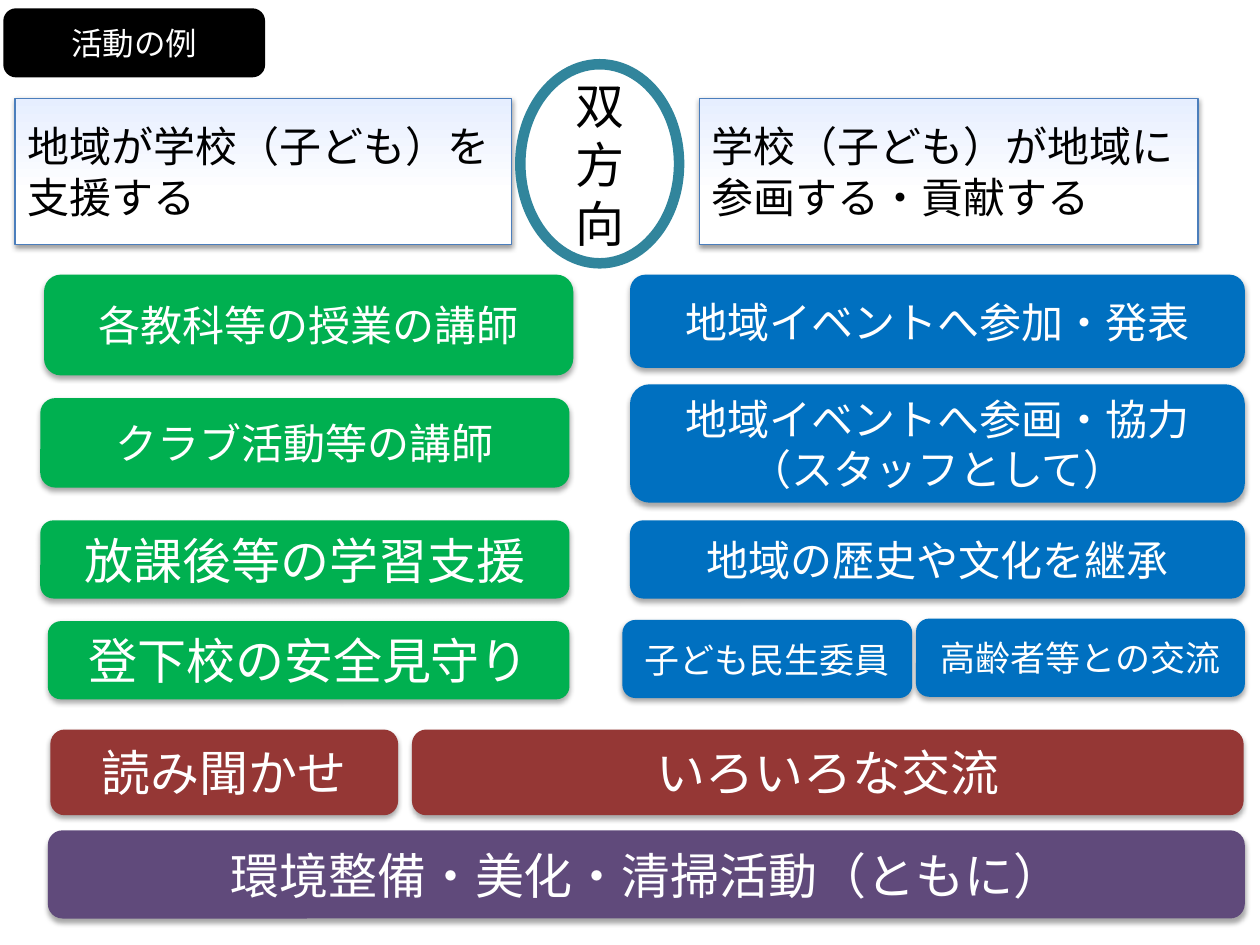
from lxml.etree import SubElement
from pptx import Presentation
from pptx.dml.color import RGBColor
from pptx.enum.shapes import MSO_SHAPE
from pptx.enum.text import MSO_ANCHOR, PP_ALIGN
from pptx.oxml.ns import qn
from pptx.util import Inches, Pt

BLACK = RGBColor(0x00, 0x00, 0x00)
WHITE = RGBColor(0xFF, 0xFF, 0xFF)
PALE = RGBColor(0xE6, 0xEE, 0xFF)
EDGE = RGBColor(0x4B, 0x7E, 0xBC)
TEAL = RGBColor(0x31, 0x85, 0x9C)
GREEN = RGBColor(0x00, 0xB0, 0x50)
BLUE = RGBColor(0x00, 0x70, 0xC0)
RED = RGBColor(0x95, 0x37, 0x35)
PURPLE = RGBColor(0x60, 0x4A, 0x7B)

LATIN = "Calibri"
ASIAN = "Noto Sans CJK JP"


def write(shape, text, size=24, color=WHITE, font=LATIN, align=PP_ALIGN.CENTER):
    frame = shape.text_frame
    frame.word_wrap = True
    frame.vertical_anchor = MSO_ANCHOR.MIDDLE
    frame.text = text
    for para in frame.paragraphs:
        para.alignment = align
        for run in para.runs:
            run.font.size = Pt(size)
            run.font.name = font
            run.font.color.rgb = color
            if font == ASIAN:
                east = SubElement(run.font._element, qn("a:ea"))
                east.set("typeface", font)


class Board:
    def __init__(self, slide):
        self.slide = slide

    def shape(self, kind, place, fill=None, line=None, width=1):
        item = self.slide.shapes.add_shape(kind, *map(Inches, place))
        item.shadow.inherit = False
        if fill is not None:
            item.fill.solid()
            item.fill.fore_color.rgb = fill
        if line is None:
            item.line.fill.background()
        else:
            item.line.color.rgb = line
            item.line.width = Pt(width)
        return item

    def shade(self, item, drop, alpha):
        effects = item._element.spPr.find(qn("a:effectLst"))
        outer = SubElement(effects, qn("a:outerShdw"), blurRad=str(Pt(3.1)),
                           dist=str(Pt(drop)), dir="5400000", rotWithShape="0")
        color = SubElement(outer, qn("a:srgbClr"), val=str(BLACK))
        SubElement(color, qn("a:alpha"), val=str(alpha * 1000))

    def label(self, text, place):
        item = self.shape(MSO_SHAPE.ROUNDED_RECTANGLE, place, BLACK, BLACK, 2)
        write(item, text, size=18)

    def head(self, text, place):
        item = self.shape(MSO_SHAPE.RECTANGLE, place, line=EDGE, width=0.75)
        item.fill.gradient()
        item.fill.gradient_angle = 270
        for stop, color, point in zip(item.fill.gradient_stops, (PALE, WHITE), (0, 0.65)):
            stop.color.rgb = color
            stop.position = point
        self.shade(item, 1.6, 38)
        write(item, text, color=BLACK, font=ASIAN, align=PP_ALIGN.LEFT)

    def ring(self, text, place):
        item = self.shape(MSO_SHAPE.OVAL, place, WHITE, TEAL, 6)
        write(item, text, size=28, color=BLACK, font=ASIAN)

    def card(self, text, place, fill, size):
        item = self.shape(MSO_SHAPE.ROUNDED_RECTANGLE, place, fill)
        self.shade(item, 1.8, 35)
        write(item, text, size=size)


CARDS = {
    GREEN: [
        ("各教科等の授業の講師", (0.35, 2.18, 4.2, 0.8), 24),
        ("クラブ活動等の講師", (0.32, 3.16, 4.2, 0.71), 24),
        ("放課後等の学習支援", (0.32, 4.13, 4.2, 0.62), 28),
        ("登下校の安全見守り", (0.38, 4.93, 4.14, 0.62), 28),
    ],
    BLUE: [
        ("地域イベントへ参加・発表", (5, 2.18, 4.88, 0.74), 24),
        ("地域イベントへ参画・協力\n（スタッフとして）", (5, 3.05, 4.88, 0.94), 24),
        ("地域の歴史や文化を継承", (5, 4.13, 4.88, 0.62), 24),
        ("子ども民生委員", (4.94, 4.92, 2.3, 0.62), 20),
        ("高齢者等との交流", (7.27, 4.91, 2.61, 0.62), 20),
    ],
    RED: [
        ("読み聞かせ", (0.4, 5.79, 2.76, 0.68), 28),
        ("いろいろな交流", (3.27, 5.79, 6.6, 0.68), 28),
    ],
    PURPLE: [
        ("環境整備・美化・清掃活動（ともに）", (0.38, 6.59, 9.5, 0.7), 28),
    ],
}


def main():
    deck = Presentation()
    deck.slide_width = Inches(10)
    deck.slide_height = Inches(7.5)
    board = Board(deck.slides.add_slide(deck.slide_layouts[6]))
    board.label("活動の例", (0.04, 0.08, 2.05, 0.52))
    board.head("地域が学校（子ども）を支援する", (0.12, 0.78, 3.94, 1.16))
    board.head("学校（子ども）が地域に\n参画する・貢献する", (5.55, 0.78, 3.96, 1.16))
    board.ring("双方向", (4.13, 0.51, 1.26, 1.58))
    for fill, group in CARDS.items():
        for text, place, size in group:
            board.card(text, place, fill, size)
    deck.save("out.pptx")


if __name__ == "__main__":
    main()
